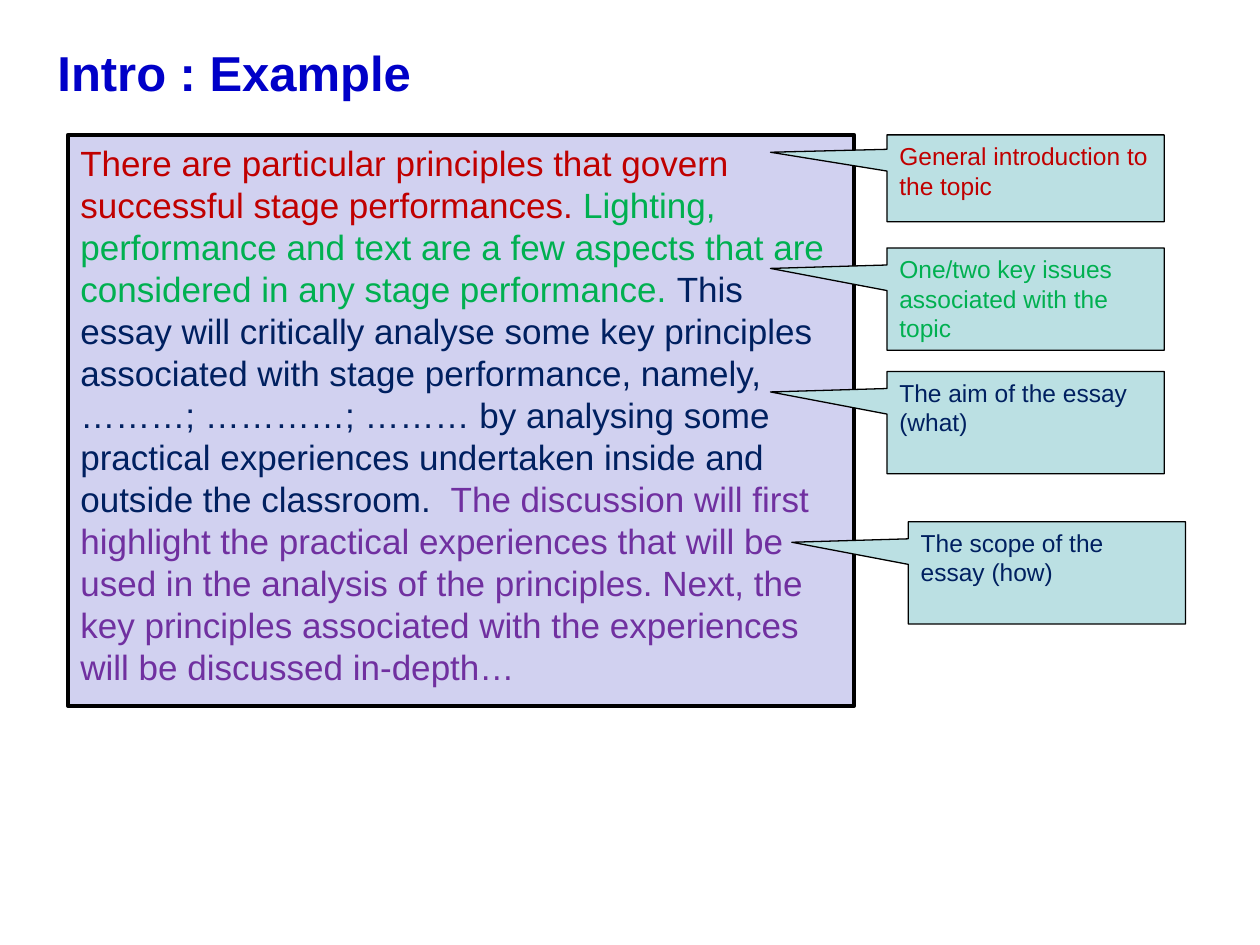
from dataclasses import dataclass

from pptx import Presentation
from pptx.dml.color import RGBColor
from pptx.enum.shapes import MSO_SHAPE as SHAPE
from pptx.enum.text import MSO_ANCHOR as ANCHOR, PP_ALIGN as ALIGN
from pptx.util import Cm, Pt

BLUE = RGBColor(0x00, 0x00, 0xC8)
RED = RGBColor(0xC0, 0x00, 0x00)
GREEN = RGBColor(0x00, 0xB0, 0x50)
NAVY = RGBColor(0x00, 0x20, 0x60)
PURPLE = RGBColor(0x70, 0x30, 0xA0)
LAVENDER = RGBColor(0xD1, 0xD1, 0xF0)
AQUA = RGBColor(0xBB, 0xE0, 0xE3)
BLACK = RGBColor(0x00, 0x00, 0x00)


@dataclass
class Callout:
    text: str
    color: RGBColor
    top: float
    left: float = 17.88
    height: float = 2.06


ESSAY = [
    ("There are particular principles that govern successful stage performances. ", RED),
    ("Lighting, performance and text are a few aspects that are considered in any "
     "stage performance. ", GREEN),
    ("This essay will critically analyse some key principles associated with stage "
     "performance, namely, ………; …………; ……… by analysing some practical experiences "
     "undertaken inside and outside the classroom.  ", NAVY),
    ("The discussion will first highlight the practical experiences that will be used "
     "in the analysis of the principles. Next, the key principles associated with the "
     "experiences will be discussed in-depth…", PURPLE),
]

CALLOUTS = [
    Callout("General introduction to the topic", RED, 2.72, height=1.75),
    Callout("One/two key issues associated with the topic", GREEN, 5.0),
    Callout("The aim of the essay (what)", NAVY, 7.49),
    Callout("The scope of the essay (how)", NAVY, 10.52, left=18.31),
]


def add_run(p, text: str, *, size: int, color: RGBColor, bold: bool = False) -> None:
    r = p.add_run()
    r.text = text
    r.font.name = "Arial"
    r.font.size = Pt(size)
    r.font.bold = bold
    r.font.color.rgb = color


def first_paragraph(sp):
    tf = sp.text_frame
    tf.word_wrap = True
    tf.vertical_anchor = ANCHOR.TOP
    p = tf.paragraphs[0]
    p.alignment = ALIGN.LEFT
    return p


def add_box(s, kind: SHAPE, left: float, top: float, width: float, height: float,
            fill: RGBColor, line: float):
    sp = s.shapes.add_shape(kind, Cm(left), Cm(top), Cm(width), Cm(height))
    sp.shadow.inherit = False
    sp.fill.solid()
    sp.fill.fore_color.rgb = fill
    sp.line.color.rgb = BLACK
    sp.line.width = Pt(line)
    return sp


def add_callout(s, c: Callout) -> None:
    sp = add_box(s, SHAPE.RECTANGULAR_CALLOUT, c.left, c.top, 5.59, c.height, AQUA, 0.75)
    sp.adjustments[0] = -0.92
    sp.adjustments[1] = -0.3
    add_run(first_paragraph(sp), c.text, size=14, color=c.color)


def main() -> None:
    prs = Presentation()
    prs.slide_width, prs.slide_height = Cm(25.4), Cm(19.05)
    s = prs.slides.add_slide(prs.slide_layouts[6])

    title = s.shapes.add_textbox(Cm(0.91), Cm(0.74), Cm(23.9), Cm(1.85))
    add_run(first_paragraph(title), "Intro : Example", size=28, color=BLUE, bold=True)

    essay = add_box(s, SHAPE.RECTANGLE, 1.37, 2.72, 15.85, 11.51, LAVENDER, 2.25)
    p = first_paragraph(essay)
    for text, color in ESSAY:
        add_run(p, text, size=20, color=color)

    for c in CALLOUTS:
        add_callout(s, c)

    prs.save("out.pptx")


if __name__ == "__main__":
    main()
